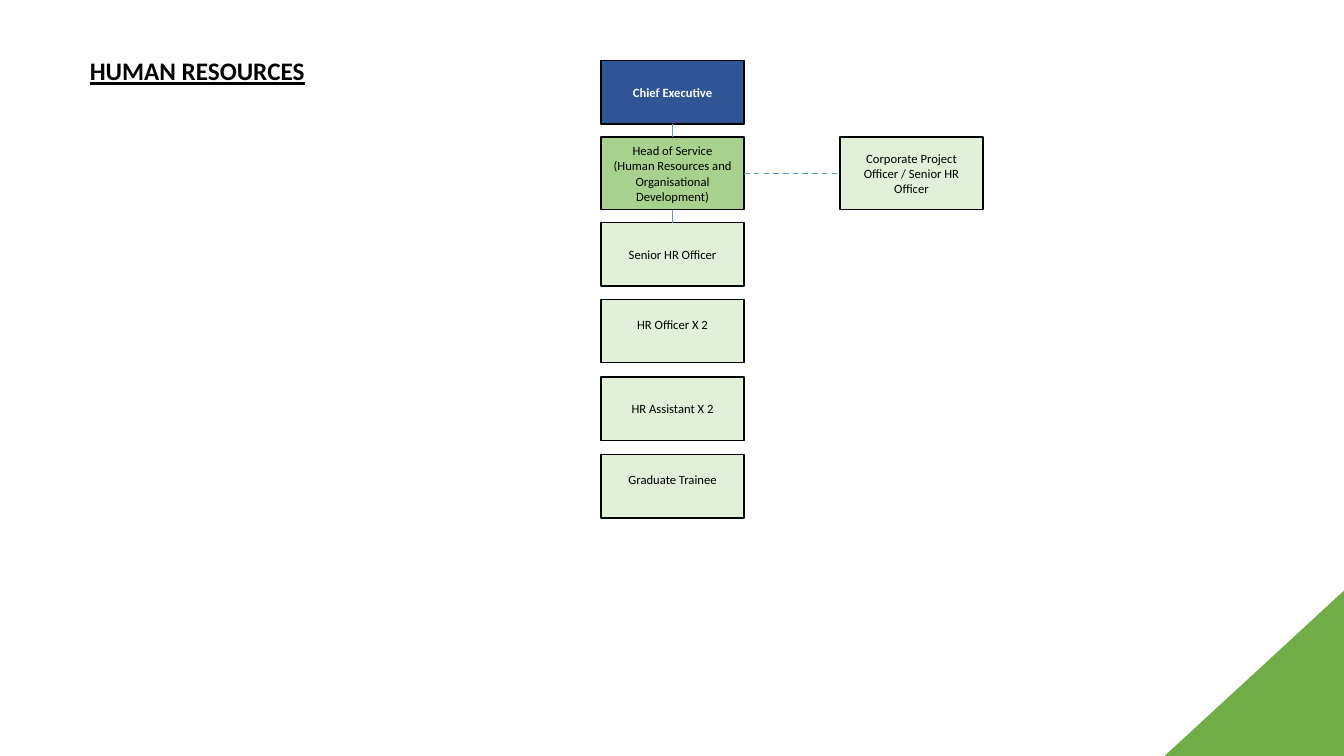
from pptx import Presentation
from pptx.dml.color import RGBColor
from pptx.enum.dml import MSO_LINE as Dash
from pptx.enum.shapes import MSO_CONNECTOR as Link, MSO_SHAPE as Shape
from pptx.enum.text import MSO_ANCHOR as Anchor, PP_ALIGN as Align
from pptx.oxml.ns import qn
from pptx.util import Inches, Pt
from lxml import etree

BLACK = RGBColor(0x00, 0x00, 0x00)
WHITE = RGBColor(0xFF, 0xFF, 0xFF)
NAVY = RGBColor(0x2F, 0x55, 0x97)
BLUE = RGBColor(0x5B, 0x9B, 0xD5)
GREEN = RGBColor(0x70, 0xAD, 0x47)
LEAF = RGBColor(0xA9, 0xD1, 0x8E)
PALE = RGBColor(0xE2, 0xF0, 0xD9)

FONT = "Calibri"
WIDE = 1.42
LOW, HIGH = 0.63, 0.72
LEFT, SIDE = 5.96, 8.33
HEAD_TOP = 1.36
LIFT = 0.14  # extra bottom inset that raises a label

# label, top, height, fill, extra bottom inset
POSTS = [
    ("Chief Executive", 0.6, LOW, NAVY, 0),
    ("Head of Service\n(Human Resources and Organisational Development)",
     HEAD_TOP, HIGH, LEAF, 0),
    ("Senior HR Officer", 2.21, LOW, PALE, 0),
    ("HR Officer X 2", 2.97, LOW, PALE, LIFT),
    ("HR Assistant X 2", 3.74, LOW, PALE, 0),
    ("Graduate Trainee", 4.51, LOW, PALE, LIFT),
]


def add_title(slide, left, top, width, height):
    title = slide.shapes.title
    title.left, title.top = Inches(left), Inches(top)
    title.width, title.height = Inches(width), Inches(height)
    frame = title.text_frame
    frame.text = "HUMAN RESOURCES"
    frame.vertical_anchor = Anchor.TOP
    para = frame.paragraphs[0]
    para.alignment = Align.LEFT
    font = para.font
    font.name, font.size, font.color.rgb = FONT, Pt(18), BLACK
    font.bold = font.underline = True


def add_post(slide, left, label, top, height, fill, lift):
    box = slide.shapes.add_shape(Shape.RECTANGLE, Inches(left), Inches(top),
                                 Inches(WIDE), Inches(height))
    box.shadow.inherit = False
    box.fill.solid()
    box.fill.fore_color.rgb = fill
    box.line.color.rgb = BLACK
    box.line.width = Pt(1)
    frame = box.text_frame
    frame.word_wrap = True
    frame.vertical_anchor = Anchor.MIDDLE
    frame.margin_bottom = Inches(0.05 + lift)
    frame.text = label
    chief = fill == NAVY
    for para in frame.paragraphs:
        para.alignment = Align.CENTER
        font = para.font
        font.name, font.size, font.bold = FONT, Pt(9), chief
        font.color.rgb = WHITE if chief else BLACK
    return box


def join(slide, start, exit_side, end, entry_side, width, dash=None):
    line = slide.shapes.add_connector(Link.STRAIGHT, 0, 0, 0, 0)
    line.begin_connect(start, exit_side)
    line.end_connect(end, entry_side)
    line.line.color.rgb = BLUE
    line.line.width = Pt(width)
    if dash:
        line.line.dash_style = dash
    etree.SubElement(line._element.spPr, qn("a:effectLst"))


def add_chart(slide, left, side):
    """Draw the column of posts and the one beside the head of service."""
    chief, head, senior, *_ = [add_post(slide, left, *post) for post in POSTS]
    project = add_post(slide, side, "Corporate Project Officer / Senior HR Officer",
                       HEAD_TOP, HIGH, PALE, 0)
    join(slide, chief, 2, head, 0, 0.5)
    join(slide, head, 2, senior, 0, 0.5)
    join(slide, head, 3, project, 1, 1, Dash.DASH)


def add_corner(slide, left, top, width, height):
    outline = slide.shapes.build_freeform(Inches(left), Inches(top + height))
    right, base = Inches(left + width), Inches(top + height)
    outline.add_line_segments([(right, Inches(top)), (right, base)])
    corner = outline.convert_to_shape()
    corner.shadow.inherit = False
    corner.fill.solid()
    corner.fill.fore_color.rgb = GREEN
    corner.line.fill.background()


def main():
    deck = Presentation()
    deck.slide_width, deck.slide_height = Inches(13.33), Inches(7.5)
    slide = deck.slides.add_slide(deck.slide_layouts[5])
    add_title(slide, 0.79, 0.5, 2.61, 0.4)
    add_chart(slide, LEFT, SIDE)
    add_corner(slide, 11.55, 5.86, 1.78, 1.64)
    deck.save("out.pptx")


if __name__ == "__main__":
    main()
